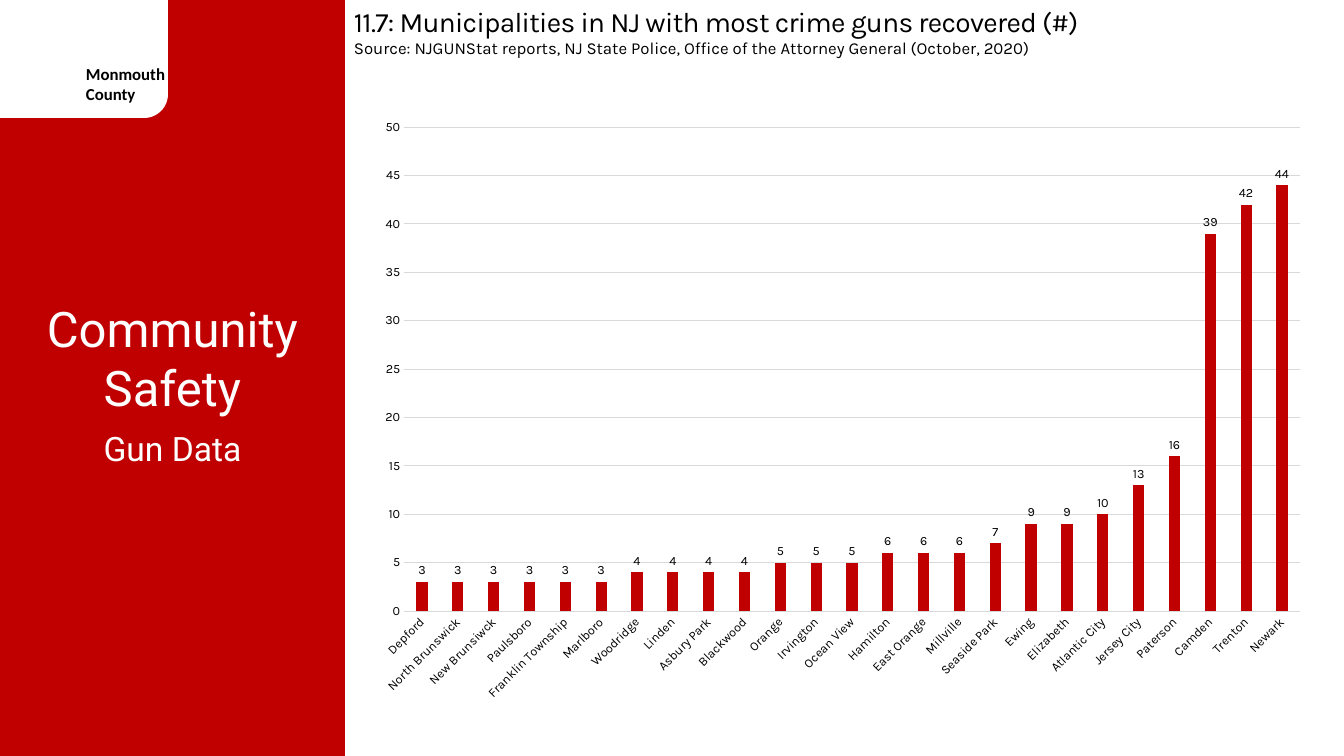
from lxml import etree
from pptx import Presentation
from pptx import util as u
from pptx.chart import data as chart_data
from pptx.dml import color
from pptx.enum import chart as chart_enum, shapes, text
from pptx.oxml import ns

PX = 914400 / 100.8
RED, WHITE, BLACK, GREY = "C00000", "FFFFFF", "000000", "D9D9D9"
MUNICIPALITIES = {
    "Depford": 3, "North Brunswick": 3, "New Brunsiwck": 3, "Paulsboro": 3,
    "Franklin Township": 3, "Marlboro": 3, "Woodridge": 4, "Linden": 4,
    "Asbury Park": 4, "Blackwood": 4, "Orange": 5, "Irvington": 5,
    "Ocean View": 5, "Hamilton": 6, "East Orange": 6, "Millville": 6,
    "Seaside Park": 7, "Ewing": 9, "Elizabeth": 9, "Atlantic City": 10,
    "Jersey City": 13, "Paterson": 16, "Camden": 39, "Trenton": 42,
    "Newark": 44,
}


def rgb(value):
    return color.RGBColor.from_string(value)


def px(*lengths):
    return [u.Emu(round(length * PX)) for length in lengths]


def set_font(font, name, size, hex_color=BLACK, bold=False):
    font.name, font.size, font.bold = name, u.Pt(size), bold
    font.color.rgb = rgb(hex_color)


def add_block(slide, kind, box, fill):
    shape = slide.shapes.add_shape(kind, *px(*box))
    shape.shadow.inherit = False
    shape.fill.solid()
    shape.fill.fore_color.rgb = rgb(fill)
    shape.line.fill.background()


def add_label(slide, box, words, name, size, hex_color=BLACK, bold=False,
              align=text.PP_ALIGN.LEFT, spacing=0):
    frame = slide.shapes.add_textbox(*px(*box)).text_frame
    frame.word_wrap = True
    paragraph = frame.paragraphs[0]
    paragraph.alignment = align
    run = paragraph.add_run()
    run.text = words
    set_font(paragraph.font, name, size, hex_color, bold)
    if spacing:
        run._r.get_or_add_rPr().set("spc", str(spacing))


def add_sidebar(slide, box):
    left, top, width, height = box
    add_block(slide, shapes.MSO_SHAPE.RECTANGLE, box, RED)
    add_block(slide, shapes.MSO_SHAPE.ROUNDED_RECTANGLE,
              (left - 33, top - 25, 201, 143), WHITE)
    add_label(slide, (left + 76, top + 59, 109, 50), "Monmouth County",
              "Calibri", 12, bold=True)
    center = text.PP_ALIGN.CENTER
    add_label(slide, (left, top + 294, width, 129), "Community Safety",
              "Roboto", 35, WHITE, align=center)
    add_label(slide, (left, top + 423, width, 50), "Gun Data",
              "Roboto", 24, WHITE, align=center)


def add_heading(slide, box):
    left, top, width, height = box
    add_label(slide, (left, top, width, 44),
              "11.7: Municipalities in NJ with most crime guns recovered (#)",
              "Karla", 20, spacing=-50)
    add_label(slide, (left, top + 33, width, 30),
              "Source: NJGUNStat reports, NJ State Police, Office of the "
              "Attorney General (October, 2020)", "Karla", 12)


def set_plot_layout(chart, x, y, w, h):
    plot_area = chart._chartSpace.chart.plotArea
    for old_layout in plot_area.findall(ns.qn("c:layout")):
        plot_area.remove(old_layout)
    layout = etree.Element(ns.qn("c:layout"))
    manual = etree.SubElement(layout, ns.qn("c:manualLayout"))
    settings = {"layoutTarget": "inner", "xMode": "edge", "yMode": "edge",
                "x": x, "y": y, "w": w, "h": h}
    for tag, value in settings.items():
        etree.SubElement(manual, ns.qn(f"c:{tag}")).set("val", str(value))
    plot_area.insert(0, layout)


def style_line(line):
    line.color.rgb = rgb(GREY)
    line.width = u.Pt(0.75)


def add_gun_chart(slide, box):
    data = chart_data.CategoryChartData()
    data.categories = list(MUNICIPALITIES)
    data.add_series("Series 1", list(MUNICIPALITIES.values()))
    chart = slide.shapes.add_chart(
        chart_enum.XL_CHART_TYPE.COLUMN_CLUSTERED, *px(*box), data).chart
    chart.has_legend = chart.has_title = False
    set_font(chart.font, "Calibri", 10)
    set_plot_layout(chart, 0.04, 0.03, 0.94, 0.8)

    category_axis, value_axis = chart.category_axis, chart.value_axis
    for axis in (category_axis, value_axis):
        axis.major_tick_mark = axis.minor_tick_mark = chart_enum.XL_TICK_MARK.NONE
        set_font(axis.tick_labels.font, "Karla", 9)
    style_line(category_axis.format.line)
    body = category_axis._element.find(".//" + ns.qn("a:bodyPr"))
    body.set("rot", "-2700000")
    body.set("vert", "horz")
    value_axis.minimum_scale, value_axis.maximum_scale = 0, 50
    value_axis.major_unit = 5
    value_axis.format.line.fill.background()
    style_line(value_axis.major_gridlines.format.line)

    plot = chart.plots[0]
    plot.gap_width, plot.overlap = 219, -27
    plot.vary_by_categories = False
    series = plot.series[0]
    series.format.fill.solid()
    series.format.fill.fore_color.rgb = rgb(RED)
    labels = series.data_labels
    labels.show_value = True
    labels.position = chart_enum.XL_LABEL_POSITION.OUTSIDE_END
    set_font(labels.font, "Karla", 9)


def main():
    presentation = Presentation()
    presentation.slide_width, presentation.slide_height = px(1344, 756)
    slide = presentation.slides.add_slide(presentation.slide_layouts[6])
    add_sidebar(slide, (0, 0, 345, 756))
    add_heading(slide, (344, 0, 994, 63))
    add_gun_chart(slide, (366, 109, 953, 605))
    presentation.save("out.pptx")


if __name__ == "__main__":
    main()
